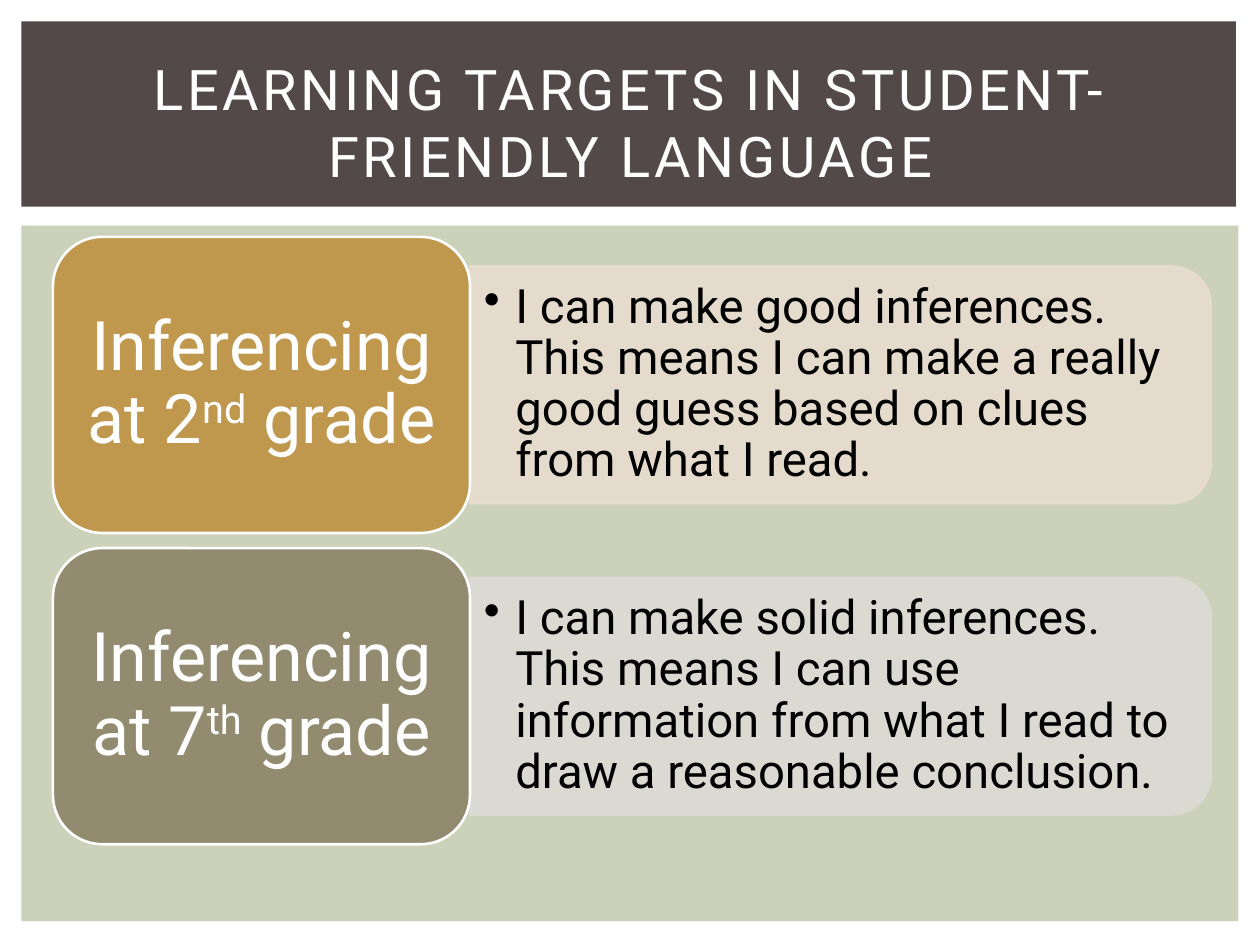
"""Build a slide of student-friendly learning targets for two grades."""
from dataclasses import dataclass

from lxml import etree
from pptx import Presentation
from pptx import util as u
from pptx.dml.color import RGBColor
from pptx.enum import shapes, text
from pptx.oxml.ns import qn


@dataclass(frozen=True)
class Theme:
    font: str = "Roboto"
    banner: str = "534949"
    panel: str = "CCD1B9"
    light: str = "FFFFFF"
    dark: str = "000000"
    title_size: int = 32
    grade_size: int = 39
    target_size: int = 27
    outline: float = 1.5
    opacity: int = 90


THEME = Theme()
TITLE = "LEARNING TARGETS IN STUDENT-FRIENDLY LANGUAGE"
TARGETS = [
    {"grade": ("Inferencing at 2", "nd", " grade"),
     "target": "I can make good inferences. This means I can make a really "
               "good guess based on clues from what I read.",
     "strong": "BF974D", "pale": "E8DDD0"},
    {"grade": ("Inferencing at 7", "th", " grade"),
     "target": "I can make solid inferences. This means I can use information "
               "from what I read to draw a reasonable conclusion.",
     "strong": "928B70", "pale": "DCDAD5"},
]

WIDTH, HEIGHT = 10, 7.5
LEFT, TOP = 0.42, 1.88
GRADE_W, GRADE_H = 3.31, 2.35
TARGET_W, TARGET_H = 5.88, 1.88
ROW_STEP = 2.47
GRADE_INSET = 0.11
TARGET_INSET = 0.09


def inches(box):
    return [u.Inches(value) for value in box]


def set_opacity(fill_parent, percent):
    for color in fill_parent.iter(qn("a:srgbClr")):
        etree.SubElement(color, qn("a:alpha")).set("val", str(percent * 1000))


def add_block(slide, kind, box, fill, line=None, rotation=0, opacity=100):
    block = slide.shapes.add_shape(kind, *inches(box))
    block.shadow.inherit = False
    block.rotation = rotation
    block.fill.solid()
    block.fill.fore_color.rgb = RGBColor.from_string(fill)
    if line:
        block.line.color.rgb = RGBColor.from_string(line)
        block.line.width = u.Pt(THEME.outline)
    else:
        block.line.fill.background()
    if opacity < 100:
        set_opacity(block._element.spPr, opacity)


def add_text(slide, box, runs, *, size, color, margins=(0.1, 0.05), centered=True,
             line_spacing=None, tracking=0, bullet=False):
    frame = slide.shapes.add_textbox(*inches(box)).text_frame
    frame.word_wrap = True
    frame.vertical_anchor = text.MSO_ANCHOR.MIDDLE
    frame.margin_left = frame.margin_right = u.Inches(margins[0])
    frame.margin_top = frame.margin_bottom = u.Inches(margins[1])
    paragraph = frame.paragraphs[0]
    paragraph.alignment = text.PP_ALIGN.CENTER if centered else text.PP_ALIGN.LEFT
    paragraph.line_spacing = line_spacing
    if bullet:
        properties = paragraph._p.get_or_add_pPr()
        properties.set("marL", str(u.Inches(0.25)))
        properties.set("indent", str(u.Inches(-0.25)))
        etree.SubElement(properties, qn("a:buChar")).set("char", "•")
    for index, words in enumerate(runs):
        run = paragraph.add_run()
        run.text = words
        run.font.name = THEME.font
        run.font.size = u.Pt(size)
        run.font.color.rgb = RGBColor.from_string(color)
        properties = run._r.get_or_add_rPr()
        if tracking:
            properties.set("spc", str(tracking * 100))
        if index == 1:
            properties.set("baseline", "30000")


def add_target(slide, row, item):
    kinds = shapes.MSO_SHAPE
    top = TOP + row * ROW_STEP
    middle = top + GRADE_H / 2
    target_left = LEFT + GRADE_W
    add_block(slide, kinds.ROUND_2_SAME_RECTANGLE,
              (target_left + (TARGET_W - TARGET_H) / 2, middle - TARGET_W / 2,
               TARGET_H, TARGET_W),
              item["pale"], line=item["pale"], rotation=90, opacity=THEME.opacity)
    text_h = TARGET_H - 2 * TARGET_INSET
    add_text(slide, (target_left, middle - text_h / 2, TARGET_W - TARGET_INSET, text_h),
             [item["target"]], size=THEME.target_size, color=THEME.dark,
             margins=(0.11, 0.06), centered=False, line_spacing=0.9, bullet=True)
    add_block(slide, kinds.ROUNDED_RECTANGLE, (LEFT, top, GRADE_W, GRADE_H),
              item["strong"], line=THEME.light)
    add_text(slide, (LEFT + GRADE_INSET, top + GRADE_INSET,
                     GRADE_W - 2 * GRADE_INSET, GRADE_H - 2 * GRADE_INSET),
             item["grade"], size=THEME.grade_size, color=THEME.light,
             margins=(0.16, 0.08), line_spacing=0.9)


def main():
    deck = Presentation()
    deck.slide_width, deck.slide_height = inches((WIDTH, HEIGHT))
    slide = deck.slides.add_slide(deck.slide_layouts[6])
    rectangle = shapes.MSO_SHAPE.RECTANGLE
    add_block(slide, rectangle, (0.17, 1.79, 9.66, 5.52), THEME.panel)
    add_block(slide, rectangle, (0.17, 0.17, 9.64, 1.47), THEME.banner)
    for row, item in enumerate(TARGETS):
        add_target(slide, row, item)
    add_text(slide, (LEFT, 0.39, 9.17, 1.15), [TITLE], size=THEME.title_size,
             color=THEME.light, tracking=2)
    deck.save("out.pptx")


if __name__ == "__main__":
    main()
